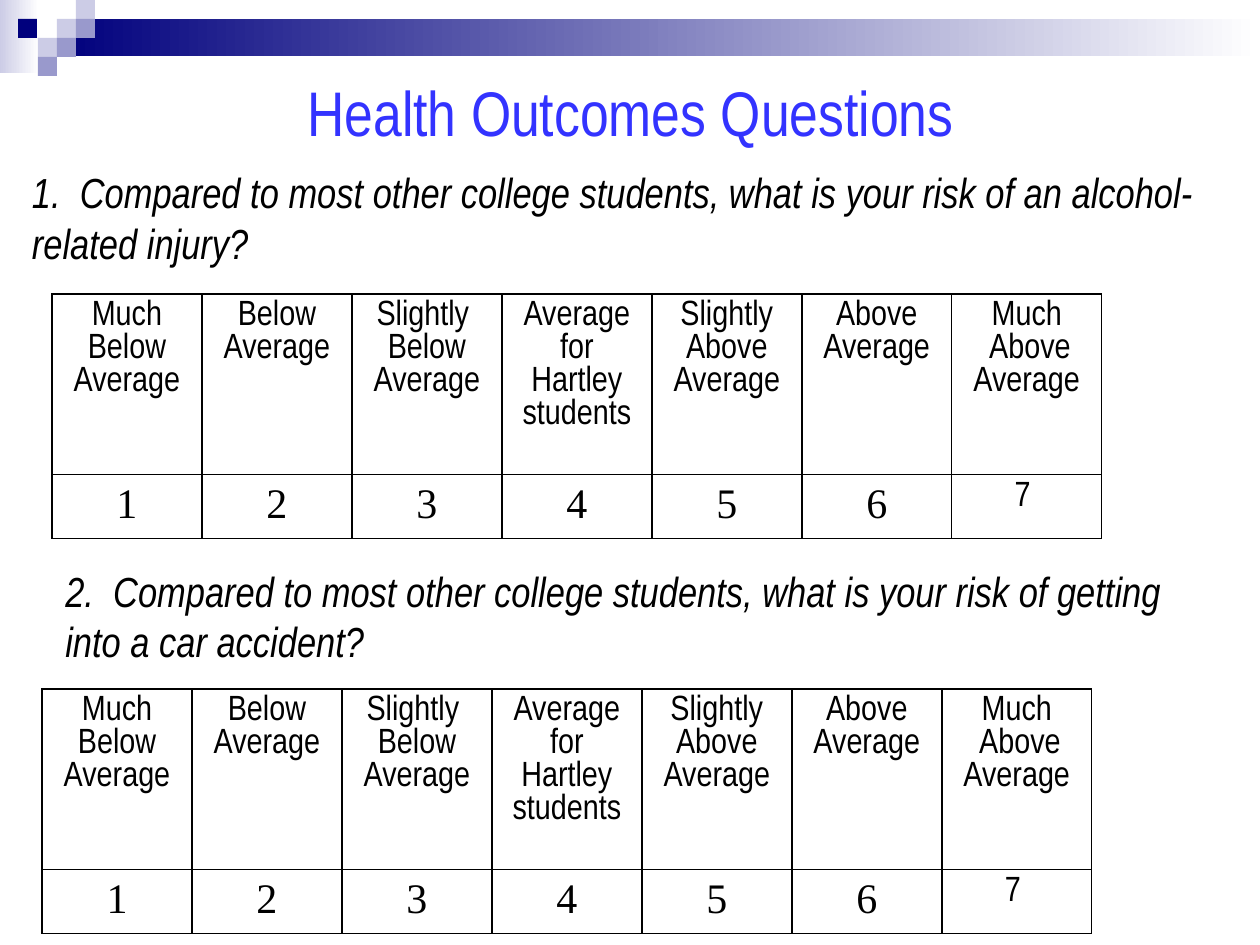
import dataclasses

import pptx
import pptx.dml.color
import pptx.enum.shapes
import pptx.enum.text
import pptx.oxml
import pptx.oxml.ns
import pptx.util

PX = 914400 // 126
NARROW = "Arial Narrow"
SERIF = "Times New Roman"
BLACK, NAVY, LILAC, LAVENDER, WHITE = "000000", "00007D", "9999CC", "CCCCE6", "FFFFFF"
CENTER = pptx.enum.text.PP_ALIGN.CENTER
LEFT = pptx.enum.text.PP_ALIGN.LEFT
MIDDLE = pptx.enum.text.MSO_ANCHOR.MIDDLE

COLUMN_WIDTH = 150
ROW_HEIGHTS = (180, 64)
HEADINGS = (
    "Much Below Average",
    "Below Average",
    "Slightly \nBelow Average",
    "Average for Hartley students",
    "Slightly\nAbove Average",
    "Above Average",
    "Much\n Above Average",
)
RATINGS = ("1", "2", "3", "4", "5", "6", "7 ")


@dataclasses.dataclass(frozen=True)
class Block:
    """A banner rectangle; a second colour makes a left-to-right gradient."""
    left: int
    top: int
    width: int
    height: int
    color: str
    end_color: str = ""


@dataclasses.dataclass(frozen=True)
class TextStyle:
    size: int
    font: str = NARROW
    color: str = BLACK
    italic: bool = False
    align: pptx.enum.text.PP_ALIGN = LEFT
    space_before: int = 0


TITLE = TextStyle(36, color="3333FF", align=CENTER)
FIRST_QUESTION = TextStyle(24, italic=True, space_before=10)
SECOND_QUESTION = TextStyle(24, italic=True)
HEADING = TextStyle(20, align=CENTER)
RATING = TextStyle(24, font=SERIF, align=CENTER)

SQUARE = 19
SQUARES = (
    (57, 19, LAVENDER), (76, 0, LAVENDER), (76, 19, LILAC), (38, 38, LAVENDER),
    (18, 19, NAVY), (57, 38, LILAC), (38, 57, LILAC),
)
BANNER = (
    Block(0, 0, 39, 73, LAVENDER, WHITE),
    Block(57, 19, 1203, 37, NAVY, WHITE),
    *(Block(left, top, SQUARE, SQUARE, color) for left, top, color in SQUARES),
)


def px(*lengths: int) -> list[int]:
    return [length * PX for length in lengths]


def rgb(color: str) -> pptx.dml.color.RGBColor:
    return pptx.dml.color.RGBColor.from_string(color)


def draw_block(page, block: Block) -> None:
    shape = page.shapes.add_shape(
        pptx.enum.shapes.MSO_SHAPE.RECTANGLE,
        *px(block.left, block.top, block.width, block.height))
    shape.shadow.inherit = False
    shape.line.fill.background()
    if block.end_color:
        shape.fill.gradient()
        shape.fill.gradient_angle = 0
        for stop, color in zip(shape.fill.gradient_stops, (block.color, block.end_color)):
            stop.color.rgb = rgb(color)
    else:
        shape.fill.solid()
        shape.fill.fore_color.rgb = rgb(block.color)


def write(para, text: str, style: TextStyle) -> None:
    para.text = text
    para.alignment = style.align
    para.line_spacing = 1.0
    para.space_before = pptx.util.Pt(style.space_before)
    para.font.size = pptx.util.Pt(style.size)
    para.font.name = style.font
    para.font.italic = style.italic
    para.font.color.rgb = rgb(style.color)


def set_borders(cell) -> None:
    """Give all four sides a thin black line, placed ahead of the cell fill."""
    properties = cell._tc.get_or_add_tcPr()
    for position, side in enumerate(("lnL", "lnR", "lnT", "lnB")):
        line = pptx.oxml.parse_xml(
            f'<a:{side} {pptx.oxml.ns.nsdecls("a")} w="12700"><a:solidFill>'
            f'<a:srgbClr val="{BLACK}"/></a:solidFill></a:{side}>')
        properties.insert(position, line)


def draw_scale(page, left: int, top: int) -> None:
    """Draw one seven-point answer table."""
    table = page.shapes.add_table(
        len(ROW_HEIGHTS), len(HEADINGS),
        *px(left, top, COLUMN_WIDTH * len(HEADINGS), sum(ROW_HEIGHTS))).table
    table.first_row = table.horz_banding = False
    for column in table.columns:
        column.width = COLUMN_WIDTH * PX
    for row, height in zip(table.rows, ROW_HEIGHTS):
        row.height = height * PX
    for column, (heading, rating) in enumerate(zip(HEADINGS, RATINGS)):
        last = column == len(RATINGS) - 1
        for row, (text, style) in enumerate(
                ((heading, HEADING), (rating, HEADING if last else RATING))):
            cell = table.cell(row, column)
            cell.fill.background()
            set_borders(cell)
            cell.text = text
            for para in cell.text_frame.paragraphs:
                write(para, para.text, style)


def main() -> None:
    deck = pptx.Presentation()
    deck.slide_width, deck.slide_height = px(1260, 945)
    page = deck.slides.add_slide(deck.slide_layouts[5])
    for block in BANNER:
        draw_block(page, block)

    title = page.shapes.title
    title.left, title.top, title.width, title.height = px(32, 73, 1197, 195)
    frame = title.text_frame
    frame.word_wrap = True
    frame.auto_size = pptx.enum.text.MSO_AUTO_SIZE.NONE
    frame.vertical_anchor = MIDDLE
    frame.margin_left = frame.margin_right = frame.margin_top = frame.margin_bottom = 0
    write(frame.paragraphs[0], "Health Outcomes Questions", TITLE)
    write(frame.add_paragraph(),
          "1.  Compared to most other college students, what is your risk of an "
          "alcohol-related injury?", FIRST_QUESTION)

    box = page.shapes.add_textbox(*px(53, 558, 1135, 115))
    box.text_frame.word_wrap = True
    box.text_frame.vertical_anchor = MIDDLE
    write(box.text_frame.paragraphs[0],
          "2.  Compared to most other college students, what is your risk of getting "
          "into a car accident?", SECOND_QUESTION)

    draw_scale(page, 42, 689)
    draw_scale(page, 52, 294)
    deck.save("out.pptx")


if __name__ == "__main__":
    main()
